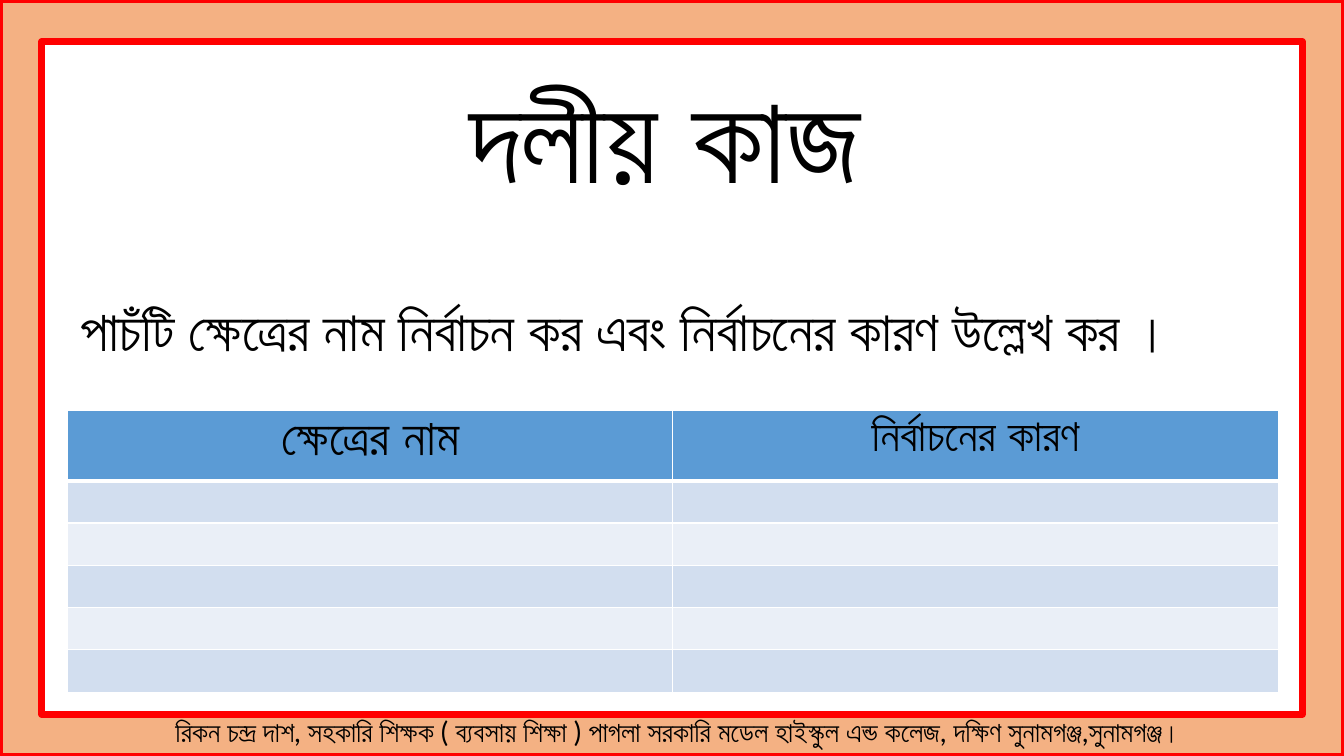
from pptx import Presentation
from pptx.dml.color import RGBColor
from pptx.enum.shapes import MSO_SHAPE
from pptx.enum.text import PP_ALIGN
from pptx.oxml import parse_xml
from pptx.oxml.ns import nsdecls
from pptx.util import Pt

COLORS = {
    "peach": "F4B183",
    "red": "FF0000",
    "black": "000000",
    "white": "FFFFFF",
    "header": "5B9BD5",
    "band_dark": "D2DEEF",
    "band_light": "EAEFF7",
}
FONT = "Lato"


def write(text_frame, text, size, align, bold=False):
    paragraph = text_frame.paragraphs[0]
    paragraph.alignment = align
    run = paragraph.add_run()
    run.text = text
    run.font.name = FONT
    run.font.size = Pt(size)
    run.font.bold = bold
    run.font.color.rgb = RGBColor.from_string(COLORS["black"])


def style_cell(cell, fill, bottom_width):
    cell.fill.solid()
    cell.fill.fore_color.rgb = RGBColor.from_string(COLORS[fill])
    properties = cell._tc.get_or_add_tcPr()
    widths = {"lnL": 1, "lnR": 1, "lnT": 1, "lnB": bottom_width}
    for position, (side, width) in enumerate(widths.items()):
        border = parse_xml(
            f'<a:{side} {nsdecls("a")} w="{Pt(width)}"><a:solidFill>'
            f'<a:srgbClr val="{COLORS["white"]}"/></a:solidFill></a:{side}>'
        )
        properties.insert(position, border)


prs = Presentation()
prs.slide_width = Pt(960)
prs.slide_height = Pt(540)
slide = prs.slides.add_slide(prs.slide_layouts[6])

border_frame = slide.shapes.add_shape(MSO_SHAPE.FRAME, 0, 0, Pt(960), Pt(540))
border_frame.adjustments[0] = 0.055
border_frame.shadow.inherit = False
border_frame.fill.solid()
border_frame.fill.fore_color.rgb = RGBColor.from_string(COLORS["peach"])
border_frame.line.color.rgb = RGBColor.from_string(COLORS["red"])
border_frame.line.width = Pt(4.5)

texts = [
    ("রিকন চন্দ্র দাশ, সহকারি শিক্ষক ( ব্যবসায় শিক্ষা ) পাগলা সরকারি মডেল হাইস্কুল এন্ড কলেজ, দক্ষিণ সুনামগঞ্জ,সুনামগঞ্জ।",
     (38.2, 506.9, 892.8, 31.7), 20, PP_ALIGN.CENTER, False),
    ("দলীয় কাজ", (33.1, 39.6, 883.4, 113.8), 88, PP_ALIGN.CENTER, True),
    ("পাচঁটি ক্ষেত্রের নাম নির্বাচন কর এবং নির্বাচনের কারণ উল্লেখ কর ।",
     (50.4, 207.4, 868.3, 55.4), 40, PP_ALIGN.LEFT, False),
]
for text, box, size, align, bold in texts:
    text_frame = slide.shapes.add_textbox(*map(Pt, box)).text_frame
    text_frame.word_wrap = True
    write(text_frame, text, size, align, bold)

reasons = slide.shapes.add_table(6, 2, Pt(48.2), Pt(293), Pt(864.8), Pt(201.6)).table
for column in reasons.columns:
    column.width = Pt(432.4)

for row_index, row in enumerate(reasons.rows):
    is_header = row_index == 0
    row.height = Pt(49.2 if is_header else 30.2)
    band = "band_dark" if row_index % 2 else "band_light"
    for cell in row.cells:
        style_cell(cell, "header" if is_header else band, 3 if is_header else 1)

headings = [("ক্ষেত্রের নাম", 36), ("নির্বাচনের কারণ", 32)]
for column_index, (heading, size) in enumerate(headings):
    write(reasons.cell(0, column_index).text_frame, heading, size, PP_ALIGN.CENTER, True)

prs.save("out.pptx")
